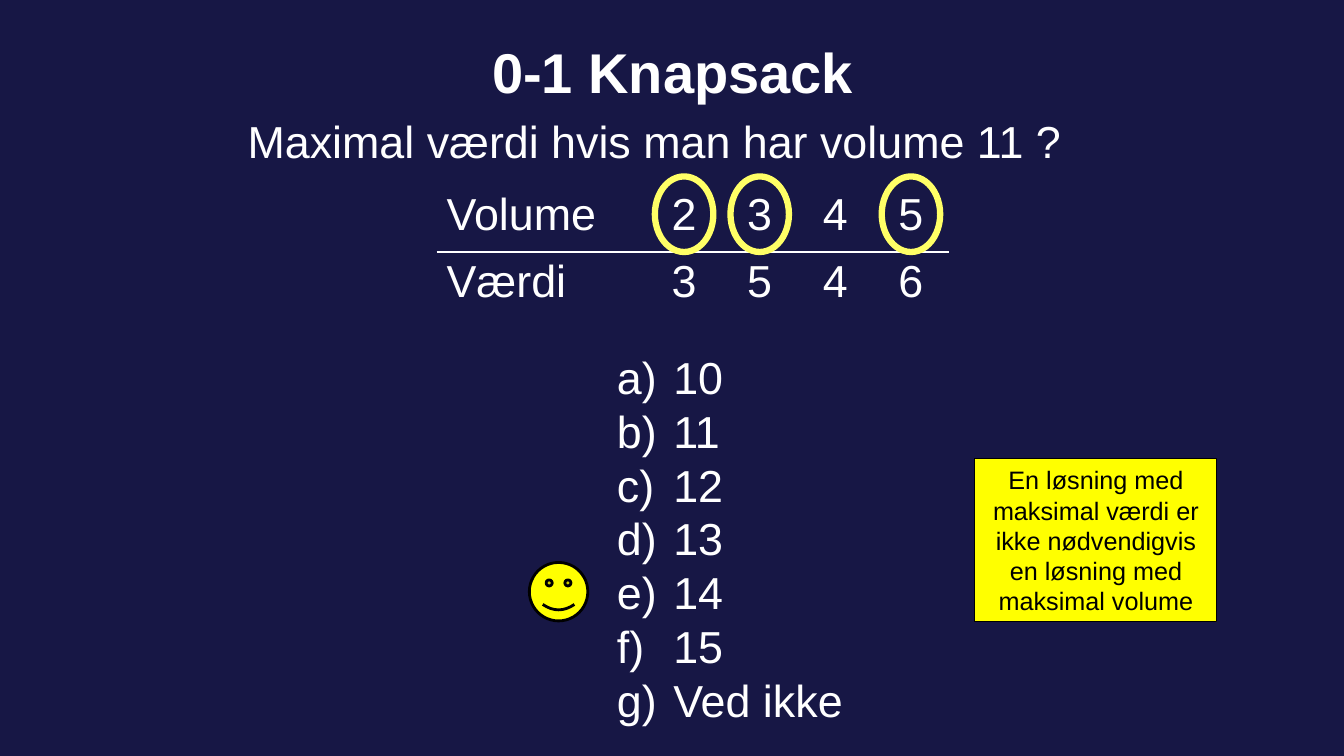
from pptx import Presentation
from pptx.dml.color import RGBColor
from pptx.enum.shapes import MSO_SHAPE
from pptx.enum.text import MSO_ANCHOR, PP_ALIGN
from pptx.oxml import parse_xml
from pptx.oxml.ns import nsdecls, qn
from pptx.util import Emu, Inches, Pt

LEFT, CENTER = PP_ALIGN.LEFT, PP_ALIGN.CENTER
TOP, MIDDLE = MSO_ANCHOR.TOP, MSO_ANCHOR.MIDDLE
OVAL, RECTANGLE, SMILEY = MSO_SHAPE.OVAL, MSO_SHAPE.RECTANGLE, MSO_SHAPE.SMILEY_FACE

THEME = {
    "font": "Arial",
    "navy": RGBColor(0x17, 0x17, 0x45),
    "white": RGBColor(0xFF, 0xFF, 0xFF),
    "black": RGBColor(0x00, 0x00, 0x00),
    "yellow": RGBColor(0xFF, 0xFF, 0x00),
    "ring": RGBColor(0xFF, 0xFF, 0x66),
    "title": 40,
    "body": 32,
    "note": 18,
    "leading": 1.2,
}
NO_STYLE = "{2D5ABB26-0587-4C30-8999-92F81FD0307C}"


def write(frame, lines, size=THEME["body"], color=THEME["white"], bold=False,
          align=LEFT, anchor=TOP, leading=None):
    """Fill a text frame, one paragraph for each line."""
    frame.word_wrap = True
    frame.vertical_anchor = anchor
    for index, line in enumerate(lines):
        para = frame.add_paragraph() if index else frame.paragraphs[0]
        para.alignment = align
        if leading:
            para.line_spacing = Pt(size * leading)
        span = para.add_run()
        span.text = line
        span.font.name = THEME["font"]
        span.font.size = Pt(size)
        span.font.bold = bold
        span.font.color.rgb = color


def add_figure(kind, left, top, width, height, line, weight, fill=None):
    """Add a flat preset shape, lengths in inches."""
    figure = page.shapes.add_shape(
        kind, Inches(left), Inches(top), Inches(width), Inches(height))
    figure.shadow.inherit = False
    if fill is None:
        figure.fill.background()
    else:
        figure.fill.solid()
        figure.fill.fore_color.rgb = fill
    figure.line.color.rgb = line
    figure.line.width = Pt(weight)
    return figure


deck = Presentation()
deck.slide_width, deck.slide_height = Inches(13.33), Inches(7.5)
page = deck.slides.add_slide(deck.slide_layouts[5])
page.background.fill.solid()
page.background.fill.fore_color.rgb = THEME["navy"]

# Title
title = page.shapes.title
title.left, title.top = Inches(1.67), Emu(0)
title.width, title.height = Inches(10), Inches(1.42)
write(title.text_frame, ["0-1 Knapsack"], size=THEME["title"], bold=True,
      align=CENTER, anchor=MIDDLE)

# Answers, lettered a) to g)
answers = page.shapes.add_textbox(Inches(6.02), Inches(3.42), Inches(3.07), Inches(3.83))
write(answers.text_frame, ["10", "11", "12", "13", "14", "15", "Ved ikke"],
      leading=THEME["leading"])
for para in answers.text_frame.paragraphs:
    properties = para._p.get_or_add_pPr()
    properties.set("marL", str(Inches(0.56)))
    properties.set("indent", str(-Inches(0.56)))
    properties.append(parse_xml(f'<a:buFont {nsdecls("a")} typeface="{THEME["font"]}"/>'))
    properties.append(parse_xml(f'<a:buAutoNum {nsdecls("a")} type="alphaLcParenR"/>'))

# Mark beside the right answer
add_figure(SMILEY, 5.25, 5.58, 0.58, 0.58, THEME["black"], 2, fill=THEME["yellow"])

# Items
items = [["Volume", "2", "3", "4", "5"], ["Værdi", "3", "5", "4", "6"]]
table_left, table_top, label_width, item_width, row_height = 4.33, 1.83, 2.08, 0.75, 0.67
table_frame = page.shapes.add_table(
    2, 5, Inches(table_left), Inches(table_top),
    Inches(label_width + 4 * item_width), Inches(2 * row_height))
table = table_frame.table
table.first_row = table.horz_banding = False
for style in table_frame.element.iter(qn("a:tableStyleId")):
    style.text = NO_STYLE
for index, column in enumerate(table.columns):
    column.width = Inches(item_width if index else label_width)
for row, values in enumerate(items):
    table.rows[row].height = Inches(row_height)
    edge = "lnT" if row else "lnB"
    for column, value in enumerate(values):
        cell = table.cell(row, column)
        write(cell.text_frame, [value], align=CENTER if column else LEFT)
        cell.fill.background()
        cell._tc.get_or_add_tcPr().insert(0, parse_xml(
            f'<a:{edge} {nsdecls("a")} w="{Pt(1)}"><a:solidFill>'
            f'<a:srgbClr val="{THEME["white"]}"/></a:solidFill></a:{edge}>'))

# Question
question = page.shapes.add_textbox(Inches(2.33), Inches(1.08), Inches(8.33), Inches(0.67))
write(question.text_frame, ["Maximal værdi hvis man har volume 11 ?"],
      align=CENTER, leading=THEME["leading"])

# Note
note = add_figure(RECTANGLE, 9.67, 4.55, 2.4, 1.62, THEME["black"], 0.75,
                  fill=THEME["yellow"])
write(note.text_frame,
      ["En løsning med maksimal værdi er ikke nødvendigvis en løsning med maksimal volume"],
      size=THEME["note"], color=THEME["black"], align=CENTER, anchor=MIDDLE,
      leading=THEME["leading"])

# Rings around the chosen items, centred in their columns
ring_width, ring_height = 0.58, 0.75
for item in (0, 1, 3):
    middle = table_left + label_width + (item + 0.5) * item_width
    add_figure(OVAL, middle - ring_width / 2, 1.75, ring_width, ring_height,
               THEME["ring"], 4.5)

deck.save("out.pptx")
